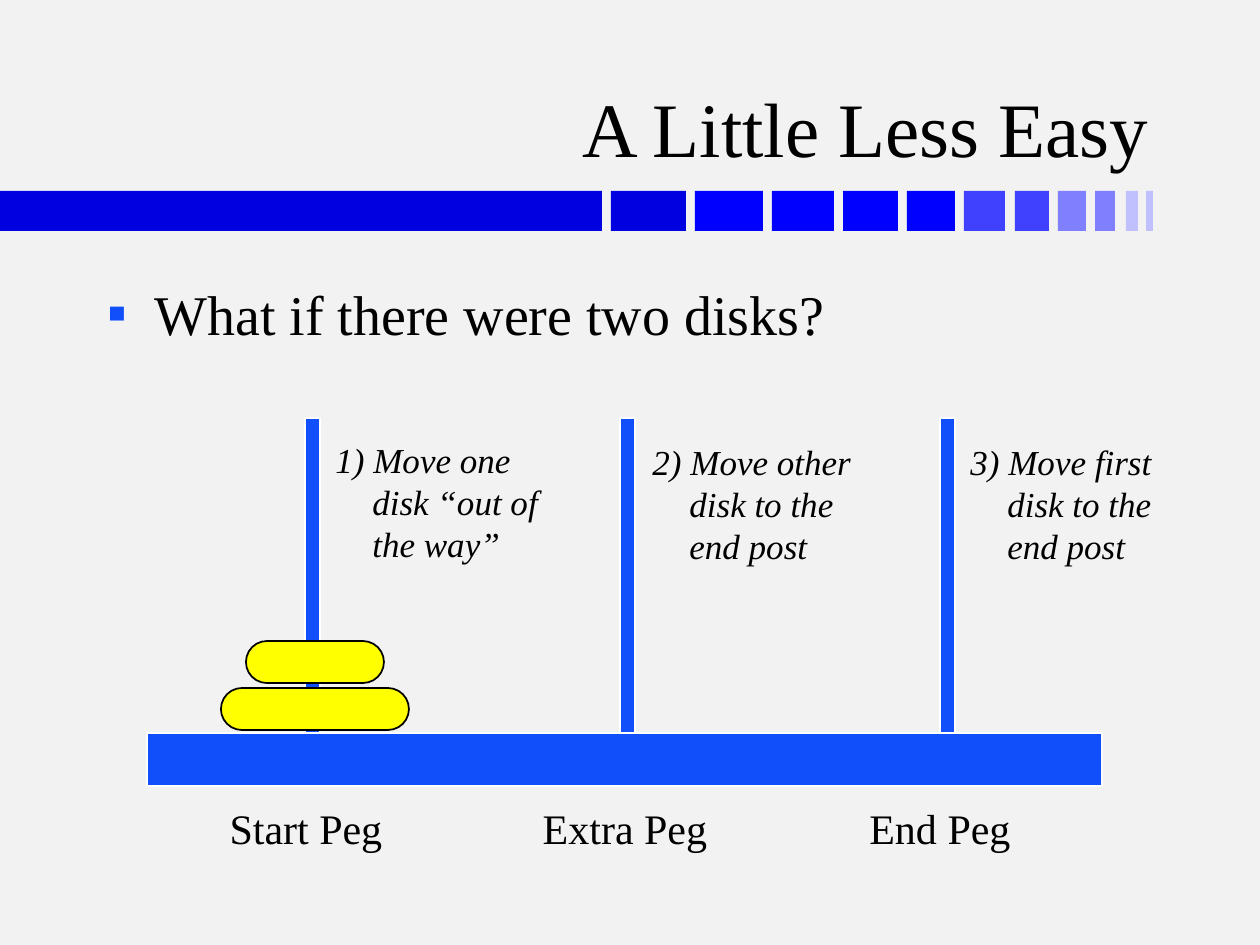
"""Build the two-disk peg puzzle slide."""
from lxml import etree
from pptx import Presentation, util as u
from pptx.dml.color import RGBColor
from pptx.enum import shapes, text
from pptx.oxml import ns

PX_PER_INCH = 126
FONT = "Times New Roman"
PAPER = RGBColor(0xF2, 0xF2, 0xF2)
BLACK = RGBColor(0, 0, 0)
WHITE = RGBColor(0xFF, 0xFF, 0xFF)
WOOD = RGBColor(0x11, 0x4F, 0xFB)
YELLOW = RGBColor(0xFF, 0xFF, 0)
BAND_SHADES = [RGBColor(0, 0, 0xE0), RGBColor(0, 0, 0xFF), RGBColor(0, 0, 0xFF),
               RGBColor(0x40, 0x40, 0xFF), RGBColor(0x80, 0x80, 0xFF),
               RGBColor(0xC0, 0xC0, 0xFF)]

TITLE = "A Little Less Easy"
QUESTION = "What if there were two disks?"
BAND = [(0, 602), (611, 75), (695, 68), (772, 62), (843, 55), (907, 48),
        (964, 41), (1015, 34), (1058, 28), (1095, 20), (1126, 12), (1146, 7)]
PEGS = [
    (305, "Start Peg", (217, 178), "1) Move one disk “out of the way”", (323, 432)),
    (620, "Extra Peg", (530, 190), "2) Move other disk to the end post", (640, 434)),
    (940, "End Peg", (857, 166), "3) Move first disk to the end post", (958, 434)),
]
DISKS = [(246, 641, 138, 42), (221, 688, 188, 42)]
BASE = (147, 733, 955, 53)
PEG_TOP, PEG_WIDTH = 418, 15


def px(length):
    return u.Inches(length / PX_PER_INCH)


def add_block(kind, box, fill, outline=None):
    block = slide.shapes.add_shape(kind, *map(px, box))
    block.shadow.inherit = False
    block.fill.solid()
    block.fill.fore_color.rgb = fill
    if outline is None:
        block.line.fill.background()
    else:
        block.line.color.rgb = outline
        block.line.width = u.Pt(1)
    return block


def write(frame, words, size, align, italic=False):
    paragraph = frame.paragraphs[0]
    paragraph.alignment = align
    run = paragraph.add_run()
    run.text = words
    run.font.name = FONT
    run.font.size = u.Pt(size)
    run.font.italic = italic
    run.font.color.rgb = BLACK
    return paragraph


def add_words(box, words, size, align=text.PP_ALIGN.LEFT, wrap=True, italic=False):
    frame = slide.shapes.add_textbox(*map(px, box)).text_frame
    frame.word_wrap = wrap
    return write(frame, words, size, align, italic)


def hang(paragraph, indent):
    properties = paragraph._p.get_or_add_pPr()
    properties.set("marL", str(px(indent)))
    properties.set("indent", str(-px(indent)))
    return properties


deck = Presentation()
deck.slide_width, deck.slide_height = px(1260), px(945)
slide = deck.slides.add_slide(deck.slide_layouts.get_by_name("Title Only"))
slide.background.fill.solid()
slide.background.fill.fore_color.rgb = PAPER

for number, (left, width) in enumerate(BAND):
    add_block(shapes.MSO_SHAPE.RECTANGLE, (left, 191, width, 40), BAND_SHADES[number // 2])

title = slide.shapes.title
title.left, title.top, title.width, title.height = map(px, (93, 24, 1069, 155))
title.text_frame.vertical_anchor = text.MSO_ANCHOR.BOTTOM
title.text_frame.auto_size = text.MSO_AUTO_SIZE.NONE
write(title.text_frame, TITLE, 44, text.PP_ALIGN.RIGHT)

question = add_words((95, 273, 1071, 567), QUESTION, 32)
question.space_before = u.Pt(6.4)
bullet = hang(question, 47)
bullet_color = etree.SubElement(bullet, ns.qn("a:buClr"))
etree.SubElement(bullet_color, ns.qn("a:srgbClr"), val=str(WOOD))
etree.SubElement(bullet, ns.qn("a:buFont"), typeface=FONT)
etree.SubElement(bullet, ns.qn("a:buChar"), char="▪")

add_block(shapes.MSO_SHAPE.RECTANGLE, BASE, WOOD, WHITE)
for left, label, (label_left, label_width), step, (step_left, step_top) in PEGS:
    add_block(shapes.MSO_SHAPE.RECTANGLE,
              (left, PEG_TOP, PEG_WIDTH, BASE[1] - PEG_TOP), WOOD, WHITE)
    add_words((label_left, 796, label_width, 63), label, 24,
              text.PP_ALIGN.CENTER, wrap=False)
    hang(add_words((step_left, step_top, 228, 140), step, 20, italic=True), 37)

for box in DISKS:
    disk = add_block(shapes.MSO_SHAPE.ROUNDED_RECTANGLE, box, YELLOW, BLACK)
    disk.adjustments[0] = 0.5

deck.save("out.pptx")
